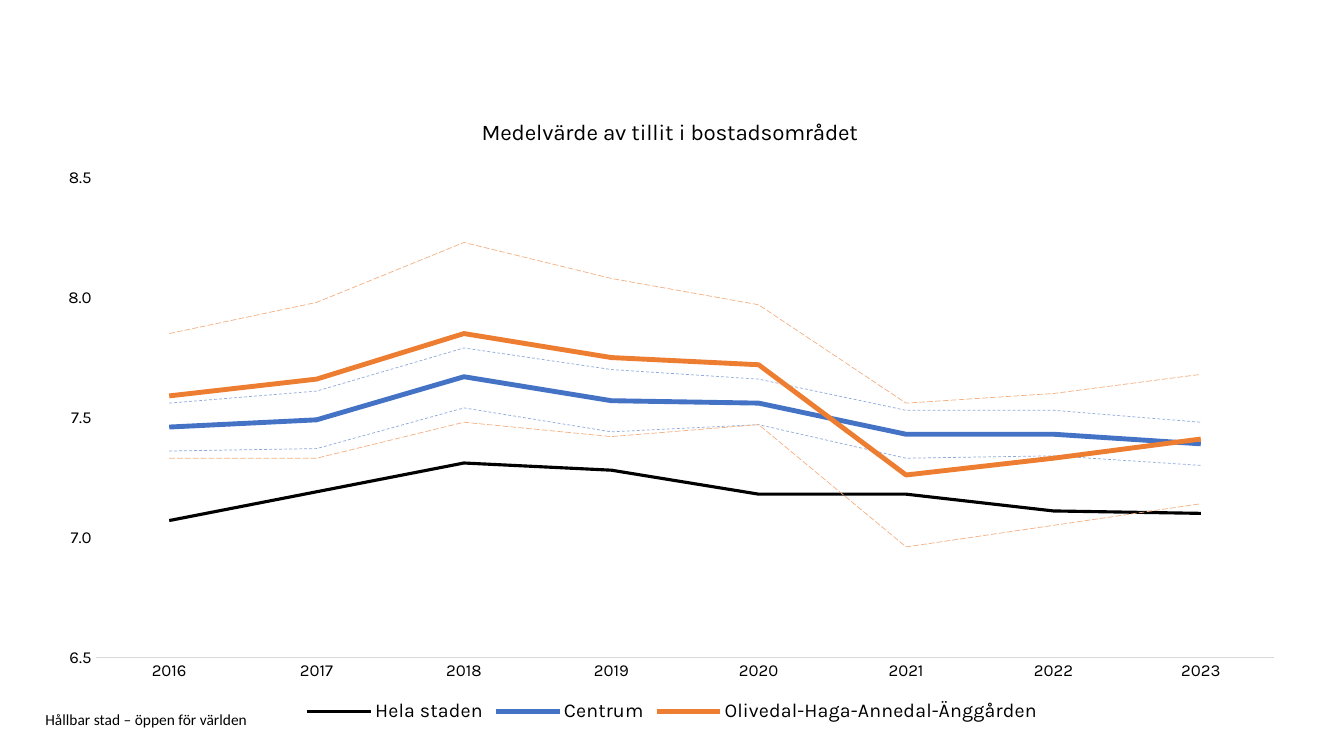
import lxml.etree
import pptx
import pptx.chart.data
import pptx.dml.color
import pptx.enum.chart
import pptx.enum.dml
import pptx.enum.text
import pptx.oxml.ns
import pptx.util

Inches = pptx.util.Inches
Pt = pptx.util.Pt
Dash = pptx.enum.dml.MSO_LINE

YEARS = [str(year) for year in range(2016, 2024)]
# name, colour, width in points, dash, in legend, values
TRUST_SERIES = [
    ("Hela staden", "000000", 2.25, None, True,
     [7.07, 7.19, 7.31, 7.28, 7.18, 7.18, 7.11, 7.1]),
    ("Centrum", "4472C4", 3.5, None, True,
     [7.46, 7.49, 7.67, 7.57, 7.56, 7.43, 7.43, 7.39]),
    ("Series 3", "8FAADC", 0.5, Dash.DASH, False,
     [7.36, 7.37, 7.54, 7.44, 7.47, 7.33, 7.34, 7.3]),
    ("Series 4", "8FAADC", 0.5, Dash.DASH, False,
     [7.56, 7.61, 7.79, 7.7, 7.66, 7.53, 7.53, 7.48]),
    ("Olivedal-Haga-Annedal-Änggården", "ED7D31", 3.5, None, True,
     [7.59, 7.66, 7.85, 7.75, 7.72, 7.26, 7.33, 7.41]),
    ("Series 6", "F4B183", 0.5, Dash.LONG_DASH, False,
     [7.33, 7.33, 7.48, 7.42, 7.47, 6.96, 7.05, 7.14]),
    ("Series 7", "F4B183", 0.5, Dash.LONG_DASH, False,
     [7.85, 7.98, 8.23, 8.08, 7.97, 7.56, 7.6, 7.68]),
]


def colour(value):
    return pptx.dml.color.RGBColor.from_string(value)


def chart_element(parent, tag, **attributes):
    return lxml.etree.SubElement(parent, pptx.oxml.ns.qn("c:" + tag), attributes)


class Page:
    text_colour = "000000"
    axis_colour = "D9D9D9"
    chart_font = "Karla"
    footer_font = "Calibri"

    def __init__(self, deck):
        self.slide = deck.slides.add_slide(deck.slide_layouts[6])

    def style(self, font, name, size):
        font.name = name
        font.size = Pt(size)
        font.bold = False
        font.color.rgb = colour(self.text_colour)

    def footer(self, text, left, top, width, height):
        box = self.slide.shapes.add_textbox(
            Inches(left), Inches(top), Inches(width), Inches(height))
        frame = box.text_frame
        frame.margin_left = frame.margin_right = 0
        frame.margin_top = frame.margin_bottom = 0
        frame.word_wrap = True
        frame.vertical_anchor = pptx.enum.text.MSO_ANCHOR.MIDDLE
        frame.text = text
        self.style(frame.paragraphs[0].runs[0].font, self.footer_font, 11)

    def line_chart(self, title, categories, series_rows, left, top, width, height):
        data = pptx.chart.data.CategoryChartData(number_format="0.00")
        data.categories = categories
        for name, *_, values in series_rows:
            data.add_series(name, values)
        chart = self.slide.shapes.add_chart(
            pptx.enum.chart.XL_CHART_TYPE.LINE, Inches(left), Inches(top),
            Inches(width), Inches(height), data).chart
        self.style(chart.font, self.chart_font, 12)

        chart.has_title = True
        title_frame = chart.chart_title.text_frame
        title_frame.text = title
        self.style(title_frame.paragraphs[0].runs[0].font, self.chart_font, 16)
        chart.chart_title.include_in_layout = False

        for series, (_, line_colour, points, dash, _, _) in zip(
                chart.plots[0].series, series_rows):
            series.smooth = False
            series.marker.style = pptx.enum.chart.XL_MARKER_STYLE.NONE
            series.format.line.color.rgb = colour(line_colour)
            series.format.line.width = Pt(points)
            if dash:
                series.format.line.dash_style = dash
        chart.plots[0].vary_by_categories = False

        self.axes(chart)
        self.legend(chart, [row[4] for row in series_rows])
        self.plot_position(chart, x=0.04, y=0.13, w=0.94, h=0.76)

    def axes(self, chart):
        years, trust = chart.category_axis, chart.value_axis
        for axis in (years, trust):
            axis.has_major_gridlines = False
            axis.major_tick_mark = pptx.enum.chart.XL_TICK_MARK.NONE
            axis.minor_tick_mark = pptx.enum.chart.XL_TICK_MARK.NONE
        years.format.line.color.rgb = colour(self.axis_colour)
        years.format.line.width = Pt(0.75)
        trust.format.line.fill.background()
        trust.minimum_scale = 6.5
        trust.maximum_scale = 8.5
        trust.major_unit = 0.5
        trust.tick_labels.number_format = "0.0"
        trust.tick_labels.number_format_is_linked = False

    def legend(self, chart, shown):
        """Place the legend below the plot, without the interval lines."""
        chart.has_legend = True
        legend = chart.legend
        legend.position = pptx.enum.chart.XL_LEGEND_POSITION.BOTTOM
        legend.include_in_layout = False
        self.style(legend.font, self.chart_font, 14)
        previous = legend._element.find(pptx.oxml.ns.qn("c:legendPos"))
        for index, visible in enumerate(shown):
            if not visible:
                entry = chart_element(legend._element, "legendEntry")
                chart_element(entry, "idx", val=str(index))
                chart_element(entry, "delete", val="1")
                previous.addnext(entry)
                previous = entry

    def plot_position(self, chart, **fractions):
        """Fix the inner plot area as fractions of the chart frame."""
        area = chart._chartSpace.chart.plotArea
        for old in area.findall(pptx.oxml.ns.qn("c:layout")):
            area.remove(old)
        layout = chart_element(area, "layout")
        area.insert(0, layout)
        manual = chart_element(layout, "manualLayout")
        chart_element(manual, "layoutTarget", val="inner")
        for side in ("xMode", "yMode"):
            chart_element(manual, side, val="edge")
        for side, fraction in fractions.items():
            chart_element(manual, side, val=str(fraction))


def main():
    deck = pptx.Presentation()
    deck.slide_width = Inches(13.33)
    deck.slide_height = Inches(7.5)
    page = Page(deck)
    page.footer("Hållbar stad – öppen för världen", 0.45, 7.06, 9.45, 0.16)
    page.line_chart("Medelvärde av tillit i bostadsområdet ", YEARS,
                    TRUST_SERIES, 0.45, 0.95, 12.44, 6.26)
    deck.save("out.pptx")


if __name__ == "__main__":
    main()
